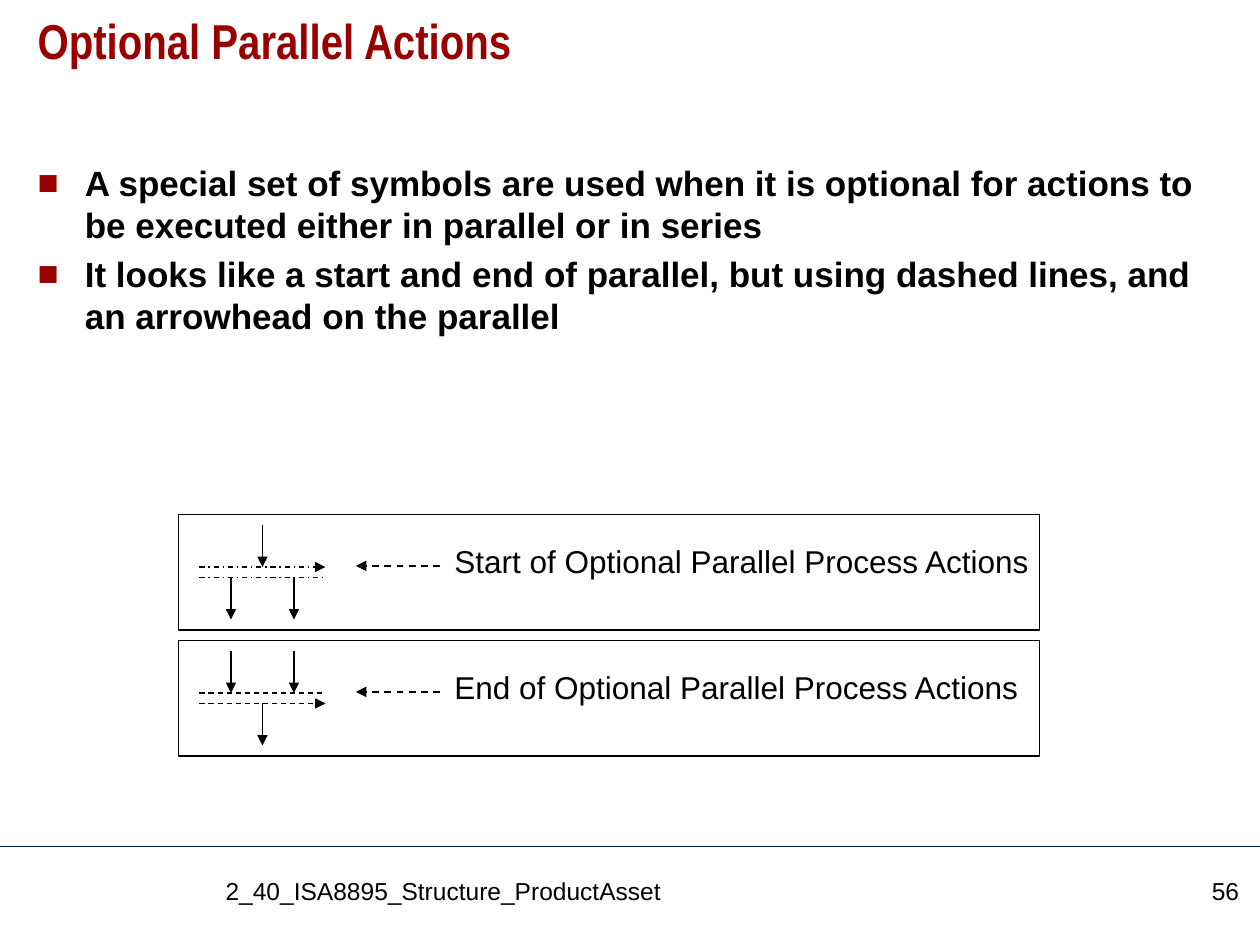
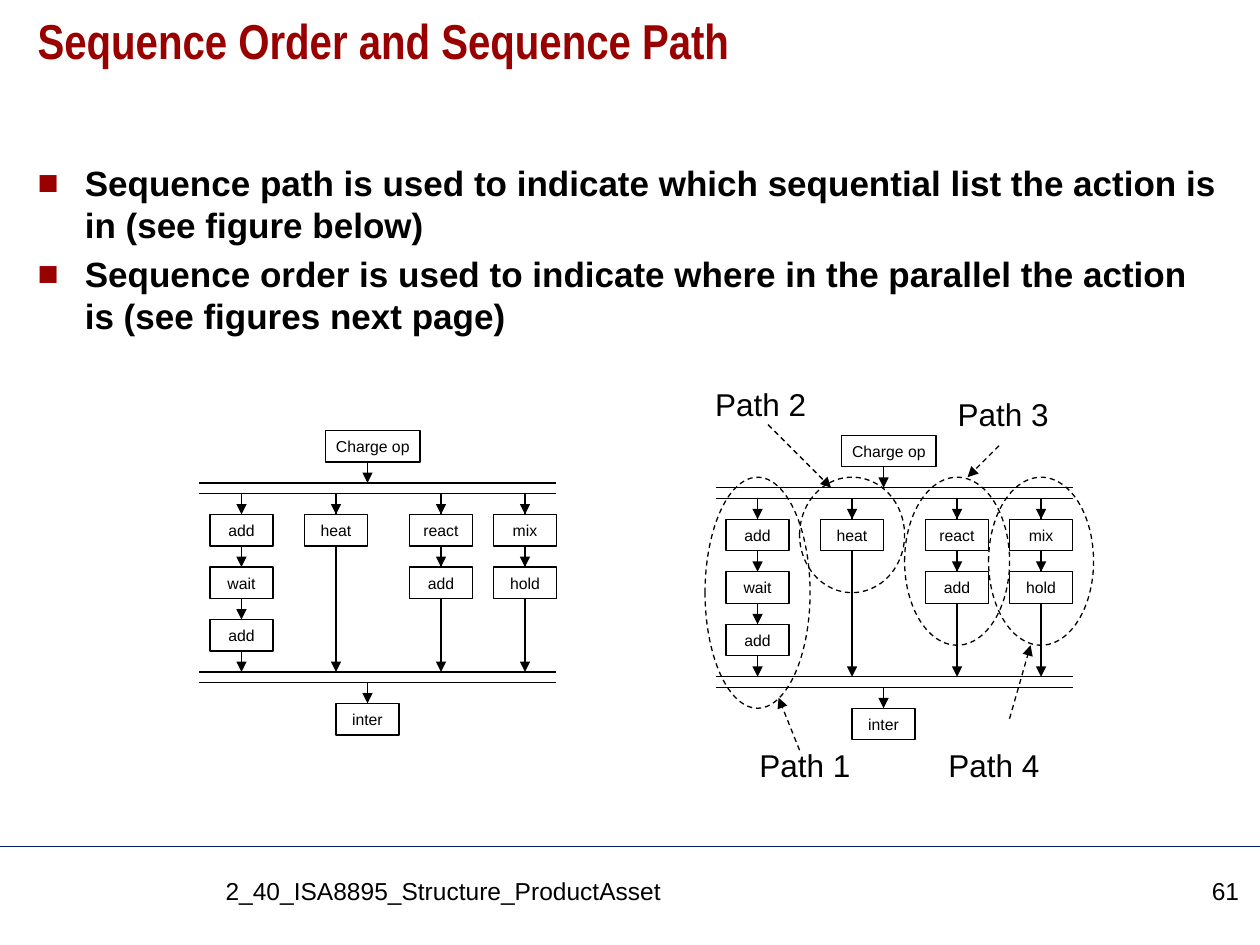
"""Build two slides on process action symbols and sequence paths."""
import lxml.etree
import pptx
import pptx.dml.color
import pptx.enum.dml
import pptx.enum.shapes
import pptx.enum.text
import pptx.oxml.ns
import pptx.util

WIDE, HIGH = pptx.util.Inches(10), pptx.util.Inches(7.5)
COLS, ROWS = 120, 90
BLACK, WHITE, RED, NAVY, INK = "000000", "FFFFFF", "990000", "002060", "010000"
DASH = pptx.enum.dml.MSO_LINE.DASH
DOTS = pptx.enum.dml.MSO_LINE.DASH_DOT
ALIGN = pptx.enum.text.PP_ALIGN
KINDS = pptx.enum.shapes.MSO_SHAPE
HEAD = {"size": pptx.util.Pt(28), "name": "Arial Narrow", "bold": True}
BODY = {"size": pptx.util.Pt(20), "name": "Arial", "bold": True}
FOOT = {"size": pptx.util.Pt(14), "name": "Arial"}
LABEL = {"size": pptx.util.Pt(18), "name": "Arial"}
SMALL = {"size": pptx.util.Pt(9), "name": "Arial"}


def hue(code):
    """Turn a hex string into a colour."""
    return pptx.dml.color.RGBColor.from_string(code)


def spot(base, col, row):
    """Turn grid columns and rows, counted from a base, into lengths."""
    return (round((base[0] + col) * WIDE / COLS),
            round((base[1] + row) * HIGH / ROWS))


def tag(node, name, **values):
    """Append a drawing element with its attributes."""
    return lxml.etree.SubElement(node, pptx.oxml.ns.qn(name), values)


def write(para, text, style, color=BLACK):
    """Add one formatted run to a paragraph."""
    run = para.add_run()
    run.text = text
    for key, value in style.items():
        setattr(run.font, key, value)
    run.font.color.rgb = hue(color)


def note(shapes, base, box, text, style, color=BLACK, wrap=True, align=ALIGN.LEFT):
    """Place a text box with one paragraph."""
    left, top, width, height = box
    item = shapes.add_textbox(*spot(base, left, top), *spot((0, 0), width, height))
    item.text_frame.word_wrap = wrap
    para = item.text_frame.paragraphs[0]
    para.alignment = align
    write(para, text, style, color)
    return para


def line(shapes, base, start, end, tip=True, dash=None, color=BLACK, width=0.75):
    """Draw a straight line, with an arrowhead at its end if asked."""
    item = shapes.add_connector(pptx.enum.shapes.MSO_CONNECTOR.STRAIGHT,
                                *spot(base, *start), *spot(base, *end))
    item.line.color.rgb = hue(color)
    item.line.width = pptx.util.Pt(width)
    if dash:
        item.line.dash_style = dash
    props = item.element.spPr
    if tip:
        tag(props.find(pptx.oxml.ns.qn("a:ln")), "a:tailEnd", type="triangle")
    tag(props, "a:effectLst")


def block(shapes, base, box, text="", kind=KINDS.RECTANGLE, fill=WHITE,
          dash=None, width=0.75):
    """Draw an outlined shape with an optional centred text."""
    left, top, wide, high = box
    item = shapes.add_shape(kind, *spot(base, left, top), *spot((0, 0), wide, high))
    item.shadow.inherit = False
    if fill:
        item.fill.solid()
        item.fill.fore_color.rgb = hue(fill)
    else:
        item.fill.background()
    item.line.color.rgb = hue(BLACK)
    item.line.width = pptx.util.Pt(width)
    if dash:
        item.line.dash_style = dash
    if text:
        frame = item.text_frame
        frame.word_wrap = False
        frame.vertical_anchor = pptx.enum.text.MSO_ANCHOR.MIDDLE
        frame.paragraphs[0].alignment = ALIGN.CENTER
        write(frame.paragraphs[0], text, SMALL)


def points(shapes, box, texts):
    """List bold points with square red bullets."""
    left, top, width, height = box
    item = shapes.add_textbox(*spot((0, 0), left, top), *spot((0, 0), width, height))
    frame = item.text_frame
    frame.word_wrap = True
    indent = pptx.util.Pt(27)
    for rank, text in enumerate(texts):
        para = frame.add_paragraph() if rank else frame.paragraphs[0]
        para.space_before = pptx.util.Pt(4 if rank else 0)
        props = para._p.get_or_add_pPr()
        props.set("marL", str(indent))
        props.set("indent", str(-indent))
        tag(tag(props, "a:buClr"), "a:srgbClr", val=RED)
        tag(props, "a:buFont", typeface="Arial")
        tag(props, "a:buChar", char="■")
        write(para, text, BODY, INK)


def page(deck, title, texts, number):
    """Add a slide with its title, points, rule and footer."""
    shapes = deck.slides.add_slide(deck.slide_layouts[6]).shapes
    base = (0, 0)
    line(shapes, base, (0, 80.6), (COLS, 80.6), tip=False, color=NAVY)
    head = note(shapes, base, (2.4, 1, 115.2, 10), title, HEAD, RED)
    head.line_spacing = 0.9
    points(shapes, (2.4, 14.8, 115.2, 64.2), texts)
    note(shapes, base, (20.3, 82.8, 86.5, 5.4),
         "2_40_ISA8895_Structure_ProductAsset", FOOT)
    note(shapes, base, (108.2, 82.8, 11, 5.4), number, FOOT, align=ALIGN.RIGHT)
    return shapes


def legend(shapes, base, text, ins, outs, lead, dash):
    """Draw a framed symbol with its label; lead is the bar with the tip."""
    block(shapes, base, (0, 0, 82, 11), width=1)
    note(shapes, base, (25.1, 2, 57.2, 4.8), text, LABEL, wrap=False)
    line(shapes, base, (24.9, 4.9), (16.9, 4.9), dash=DASH, width=1)
    sign = shapes.add_group_shape().shapes
    for row in (5, 6):
        line(sign, base, (2, row), (14, row), tip=row == lead, dash=dash)
    for cols, top in ((ins, 1), (outs, 6)):
        for col in cols:
            line(sign, base, (col, top), (col, top + 4))


LANES = {4: ("add", "wait", "add"), 13: ("heat",),
         23: ("react", "add"), 31: ("mix", "hold")}


def flow(shapes, base):
    """Draw the parallel lanes between their start and end bars."""
    block(shapes, base, (12, 0, 9, 3), "Charge op")
    block(shapes, base, (13, 26, 6, 3), "inter")
    for row in (5, 6, 23, 24):
        line(shapes, base, (0, row), (34, row), tip=False)
    for row in (3, 24):
        line(shapes, base, (16, row), (16, row + 2))
    for col, steps in LANES.items():
        line(shapes, base, (col, 7), (col, 23))
        for rank, step in enumerate(steps):
            top = 8 + 5 * rank
            block(shapes, base, (col - 3, top, 6, 3), step)
            line(shapes, base, (col, top - 2), (col, top))


def paths(shapes, base):
    """Ring each lane and name its path."""
    for col, high in zip(LANES, (22, 11, 16, 16)):
        block(shapes, base, (col - 5, 4, 10, high), kind=KINDS.OVAL,
              fill=None, dash=DASH)
    marks = (("Path 1", (8.5, 29), (8, 30), (6, 25)),
             ("Path 2", (4.3, -5.4), (5, -1), (11, 5)),
             ("Path 3", (27.4, -4.4), (27, 1), (24, 4)),
             ("Path 4", (26.5, 29), (28, 27), (30, 20)))
    wide = 14
    for text, (middle, top), start, end in marks:
        line(shapes, base, start, end, dash=DASH)
        note(shapes, base, (middle - wide / 2, top, wide, 4.8), text, LABEL,
             align=ALIGN.CENTER)


def main():
    """Build and save the deck."""
    deck = pptx.Presentation()
    deck.slide_width, deck.slide_height = WIDE, HIGH

    shapes = page(deck, "Optional Parallel Actions", (
        "A special set of symbols are used when it is optional for actions "
        "to be executed either in parallel or in series",
        "It looks like a start and end of parallel, but using dashed lines, "
        "and an arrowhead on the parallel"), "56")
    legend(shapes, (17, 49), "Start of Optional Parallel Process Actions",
           (8,), (5, 11), 5, DOTS)
    legend(shapes, (17, 61), "End of Optional Parallel Process Actions",
           (5, 11), (8,), 6, DASH)

    shapes = page(deck, "Sequence Order and Sequence Path", (
        "Sequence path is used to indicate which sequential list the action "
        "is in (see figure below)",
        "Sequence order is used to indicate where in the parallel the action "
        "is (see figures next page)"), "61")
    flow(shapes.add_group_shape().shapes, (19, 41))
    chart, base = shapes.add_group_shape().shapes, (68.15, 41.45)
    flow(chart, base)
    paths(chart, base)
    deck.save("out.pptx")


if __name__ == "__main__":
    main()
